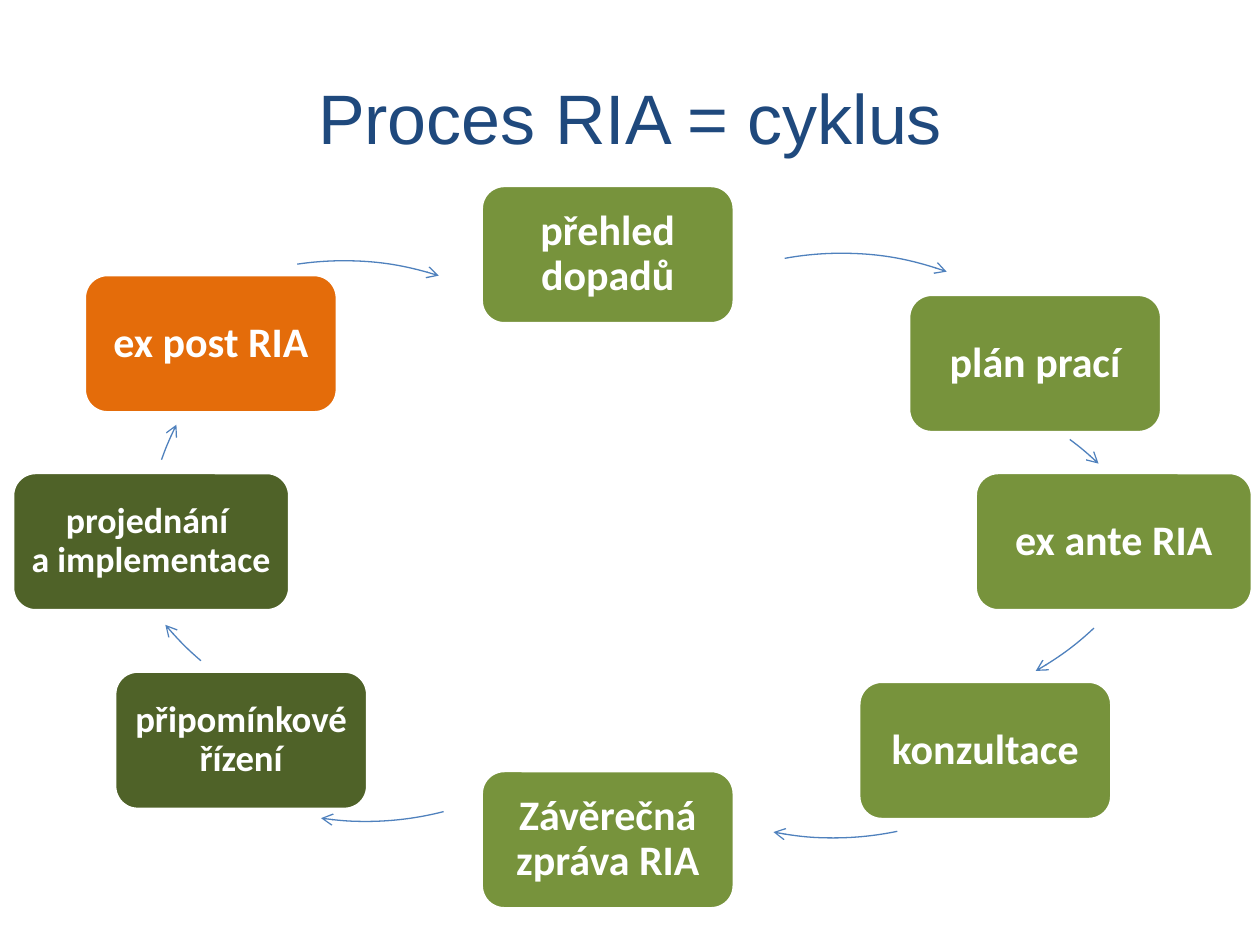
"""Build the slide showing the RIA process as a cycle of eight steps."""
from dataclasses import dataclass

from lxml.etree import SubElement
from pptx import Presentation
from pptx.dml.color import RGBColor
from pptx.enum.shapes import MSO_SHAPE as Shape
from pptx.enum.text import MSO_ANCHOR as Anchor, PP_ALIGN as Align
from pptx.oxml.ns import qn
from pptx.util import Pt

GREEN, DARK, ORANGE = "77933C", "4F6228", "E46C0A"
WHITE, BLUE, NAVY = "FFFFFF", "4F81BD", "1F497D"
NARROW, WIDE, HEIGHT = 144.6, 158.4, 79
DIAMETER = 356.4


@dataclass
class Step:
    text: str
    left: float
    top: float
    width: float = NARROW
    color: str = GREEN
    size: float = 24
    inset: float = 7.2


@dataclass
class Arc:
    left: float
    top: float
    start: float
    end: float


STEPS = [
    Step("přehled dopadů", 275, 106),
    Step("plán prací", 519.2, 168.2),
    Step("ex ante RIA", 557.3, 270, WIDE),
    Step("konzultace", 490.7, 389.3),
    Step("Závěrečná zpráva RIA", 275, 440.3),
    Step("připomínkové řízení", 65.5, 383.5, NARROW, DARK, 21, 6.5),
    Step("projednání \na implementace", 7.2, 270, WIDE, DARK, 20.5, 6.5),
    Step("ex post RIA", 48.2, 156.9, color=ORANGE),
]

ARCS = [
    Arc(302.4, 144.7, 259.6, 289.8),
    Arc(326.9, 216, 306.6, 313.5),
    Arc(325.4, 50.4, 47, 60.3),
    Arc(298.1, 122.4, 78.2, 101.1),
    Arc(31, 113, 75.6, 98.3),
    Arc(52.6, 64.1, 130.6, 139.9),
    Arc(82.1, 144, 199.5, 206.5),
    Arc(18, 149, 261.5, 287.8),
]


def rgb(color: str) -> RGBColor:
    return RGBColor.from_string(color)


def write(tf, text: str, *, size: float, color: str, font: str,
          bold: bool = False, spacing: float = 1.0) -> None:
    tf.word_wrap = True
    tf.vertical_anchor = Anchor.MIDDLE
    p = tf.paragraphs[0]
    p.text = text
    p.alignment = Align.CENTER
    p.line_spacing = spacing
    for r in p.runs:
        r.font.size, r.font.name, r.font.bold = Pt(size), font, bold
        r.font.color.rgb = rgb(color)


def add_step(s, step: Step) -> None:
    sp = s.shapes.add_shape(Shape.ROUNDED_RECTANGLE, Pt(step.left), Pt(step.top),
                            Pt(step.width), Pt(HEIGHT))
    sp.shadow.inherit = False
    sp.fill.solid()
    sp.fill.fore_color.rgb = rgb(step.color)
    sp.line.color.rgb = rgb(WHITE)
    sp.line.width = Pt(2)
    tf = sp.text_frame
    tf.margin_left = tf.margin_right = Pt(step.inset)
    tf.margin_top = tf.margin_bottom = Pt(step.inset)
    write(tf, step.text, size=step.size, color=WHITE, font="Calibri",
          bold=True, spacing=0.9)


def add_arc(s, arc: Arc) -> None:
    sp = s.shapes.add_shape(Shape.ARC, Pt(arc.left), Pt(arc.top),
                            Pt(DIAMETER), Pt(DIAMETER))
    sp.shadow.inherit = False
    sp.adjustments[0] = arc.start * 0.6
    sp.adjustments[1] = arc.end * 0.6
    sp.fill.background()
    sp.line.color.rgb = rgb(BLUE)
    sp.line.width = Pt(0.75)
    ln = sp.element.spPr.find(qn("a:ln"))
    SubElement(ln, qn("a:tailEnd"), type="arrow")


def main() -> None:
    prs = Presentation()
    prs.slide_width, prs.slide_height = Pt(720), Pt(540)
    s = prs.slides.add_slide(prs.slide_layouts[5])
    title = s.shapes.title
    title.left, title.top, title.width, title.height = Pt(36), Pt(21.6), Pt(648), Pt(90)
    write(title.text_frame, "Proces RIA = cyklus", size=40, color=NAVY, font="Arial")
    for step, arc in zip(STEPS, ARCS):
        add_step(s, step)
        add_arc(s, arc)
    prs.save("out.pptx")


if __name__ == "__main__":
    main()
